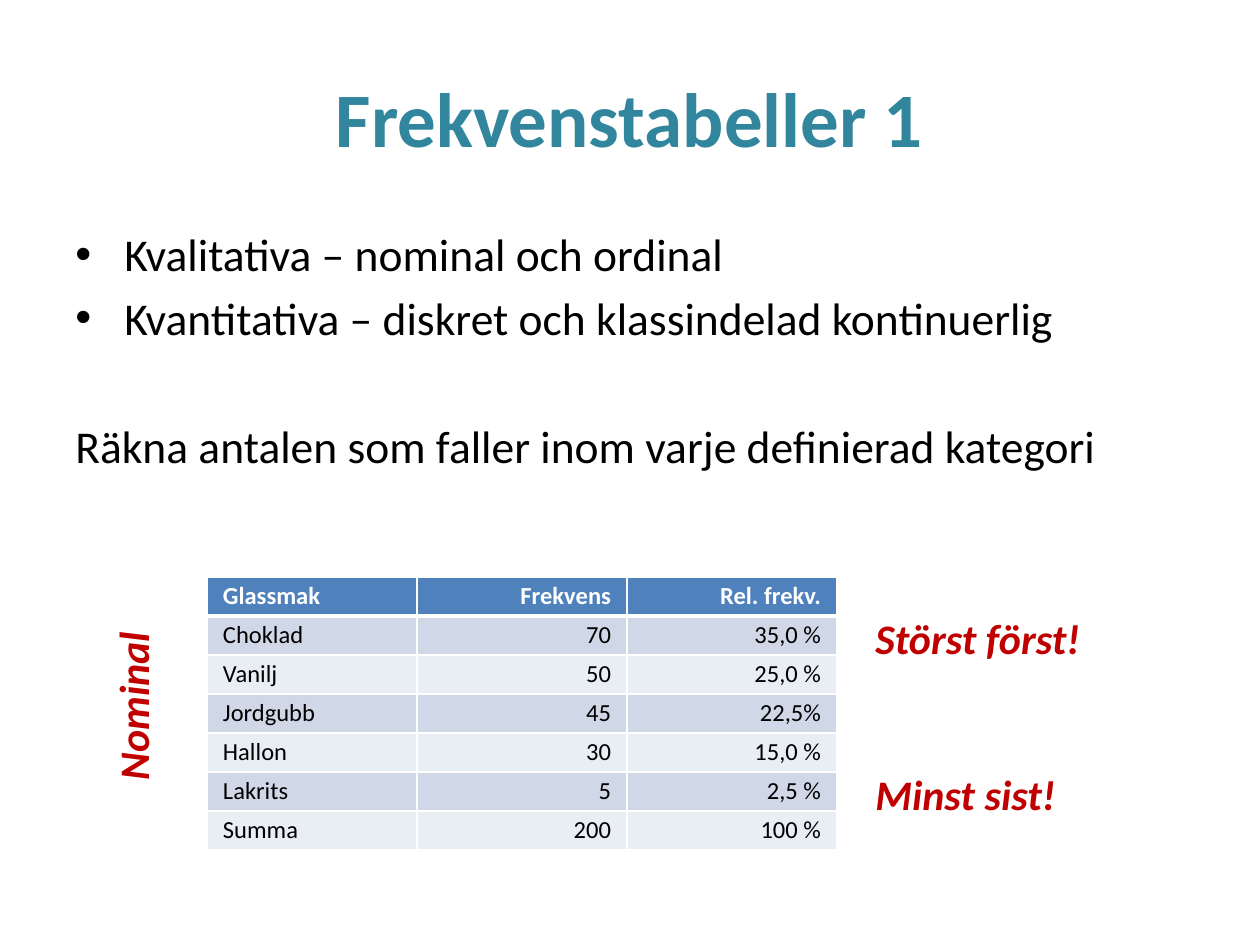
from lxml import etree
from pptx import Presentation
from pptx.dml.color import RGBColor
from pptx.enum.text import MSO_ANCHOR, PP_ALIGN
from pptx.oxml.ns import qn
from pptx.util import Pt

EMU_PER_PX = 914400 / 126
LEFT, CENTER, RIGHT = PP_ALIGN.LEFT, PP_ALIGN.CENTER, PP_ALIGN.RIGHT
TOP, MIDDLE = MSO_ANCHOR.TOP, MSO_ANCHOR.MIDDLE

COLORS = {
    "title": "31859C",
    "text": "000000",
    "note": "C00000",
    "white": "FFFFFF",
    "header": "4F81BD",
    "odd": "D0D8E8",
    "even": "E9EDF4",
}
TITLE = {"size": Pt(44), "bold": True}
BODY = {"size": Pt(26), "bold": False}
NOTE = {"size": Pt(24), "bold": True, "italic": True}
HEADER = {"size": Pt(14), "bold": True}
CELL = {"size": Pt(14), "bold": False}

BODY_GAP = 5.2
BODY_LINE = 31.7
BULLET_INDENT = 49
COLUMN_WIDTH, ROW_HEIGHT = 210, 39

FREQUENCIES = [
    ("Glassmak", "Frekvens", "Rel. frekv."),
    ("Choklad", "70", "35,0 %"),
    ("Vanilj", "50", "25,0 %"),
    ("Jordgubb", "45", "22,5%"),
    ("Hallon", "30", "15,0 %"),
    ("Lakrits", "5", "2,5 %"),
    ("Summa", "200", "100 %"),
]


def px(length):
    return round(length * EMU_PER_PX)


def write(paragraph, text, color, font_format, align=LEFT, space_before=0):
    paragraph.alignment = align
    paragraph.space_before = Pt(space_before)
    run = paragraph.add_run()
    run.text = text
    run.font.name = "Calibri"
    run.font.color.rgb = RGBColor.from_string(COLORS[color])
    for attribute, value in font_format.items():
        setattr(run.font, attribute, value)


def add_bullet(paragraph):
    properties = paragraph._p.get_or_add_pPr()
    properties.set("marL", str(px(BULLET_INDENT)))
    properties.set("indent", str(-px(BULLET_INDENT)))
    etree.SubElement(properties, qn("a:buFont")).set("typeface", "Arial")
    etree.SubElement(properties, qn("a:buChar")).set("char", "•")


def add_text_frame(slide, box, anchor=TOP, rotation=0):
    text_box = slide.shapes.add_textbox(*map(px, box))
    text_box.rotation = rotation
    frame = text_box.text_frame
    frame.word_wrap = True
    frame.vertical_anchor = anchor
    return frame


def add_title(slide):
    frame = add_text_frame(slide, (63, 38, 1134, 157), MIDDLE)
    write(frame.paragraphs[0], "Frekvenstabeller 1", "title", TITLE, CENTER)


def add_body(slide):
    frame = add_text_frame(slide, (63, 220, 1096, 706))
    kinds = frame.paragraphs[0]
    write(kinds, "Kvalitativa – nominal och ordinal", "text", BODY, space_before=BODY_GAP)
    add_bullet(kinds)
    scales = frame.add_paragraph()
    write(scales, "Kvantitativa – diskret och klassindelad kontinuerlig", "text", BODY,
          space_before=BODY_GAP)
    add_bullet(scales)
    write(frame.add_paragraph(), "Räkna antalen som faller inom varje definierad kategori",
          "text", BODY, space_before=2 * BODY_GAP + BODY_LINE)


def add_note(slide, text, box, align=LEFT, rotation=0):
    frame = add_text_frame(slide, box, rotation=rotation)
    write(frame.paragraphs[0], text, "note", NOTE, align, 4.8)


def add_borders(cell, bottom_width):
    properties = cell._tc.get_or_add_tcPr()
    widths = {"a:lnL": 1, "a:lnR": 1, "a:lnT": 1, "a:lnB": bottom_width}
    for side, width in widths.items():
        line = etree.SubElement(properties, qn(side), w=str(Pt(width)))
        fill = etree.SubElement(line, qn("a:solidFill"))
        etree.SubElement(fill, qn("a:srgbClr"), val=COLORS["white"])


def fill_cell(cell, text, row, column):
    is_header = row == 0
    cell_format = {
        "vertical_anchor": MIDDLE,
        "margin_left": px(16),
        "margin_right": px(16),
        "margin_top": px(4),
        "margin_bottom": px(4),
    }
    for attribute, value in cell_format.items():
        setattr(cell, attribute, value)
    add_borders(cell, 3 if is_header else 1)
    band = "header" if is_header else "odd" if row % 2 else "even"
    cell.fill.solid()
    cell.fill.fore_color.rgb = RGBColor.from_string(COLORS[band])
    write(cell.text_frame.paragraphs[0], text, "white" if is_header else "text",
          HEADER if is_header else CELL, RIGHT if column else LEFT)


def add_frequency_table(slide):
    rows, columns = len(FREQUENCIES), len(FREQUENCIES[0])
    box = (207, 577, columns * COLUMN_WIDTH, rows * ROW_HEIGHT)
    table = slide.shapes.add_table(rows, columns, *map(px, box)).table
    for row, values in enumerate(FREQUENCIES):
        table.rows[row].height = px(ROW_HEIGHT)
        for column, text in enumerate(values):
            fill_cell(table.cell(row, column), text, row, column)


def main():
    presentation = Presentation()
    presentation.slide_width = px(1260)
    presentation.slide_height = px(945)
    slide = presentation.slides.add_slide(presentation.slide_layouts[6])
    add_title(slide)
    add_body(slide)
    add_frequency_table(slide)
    add_note(slide, "Störst först!", (863, 606, 330, 52))
    add_note(slide, "Minst sist!", (863, 762, 330, 52))
    add_note(slide, "Nominal", (54, 660, 186, 92), CENTER, 270)
    presentation.save("out.pptx")


if __name__ == "__main__":
    main()
